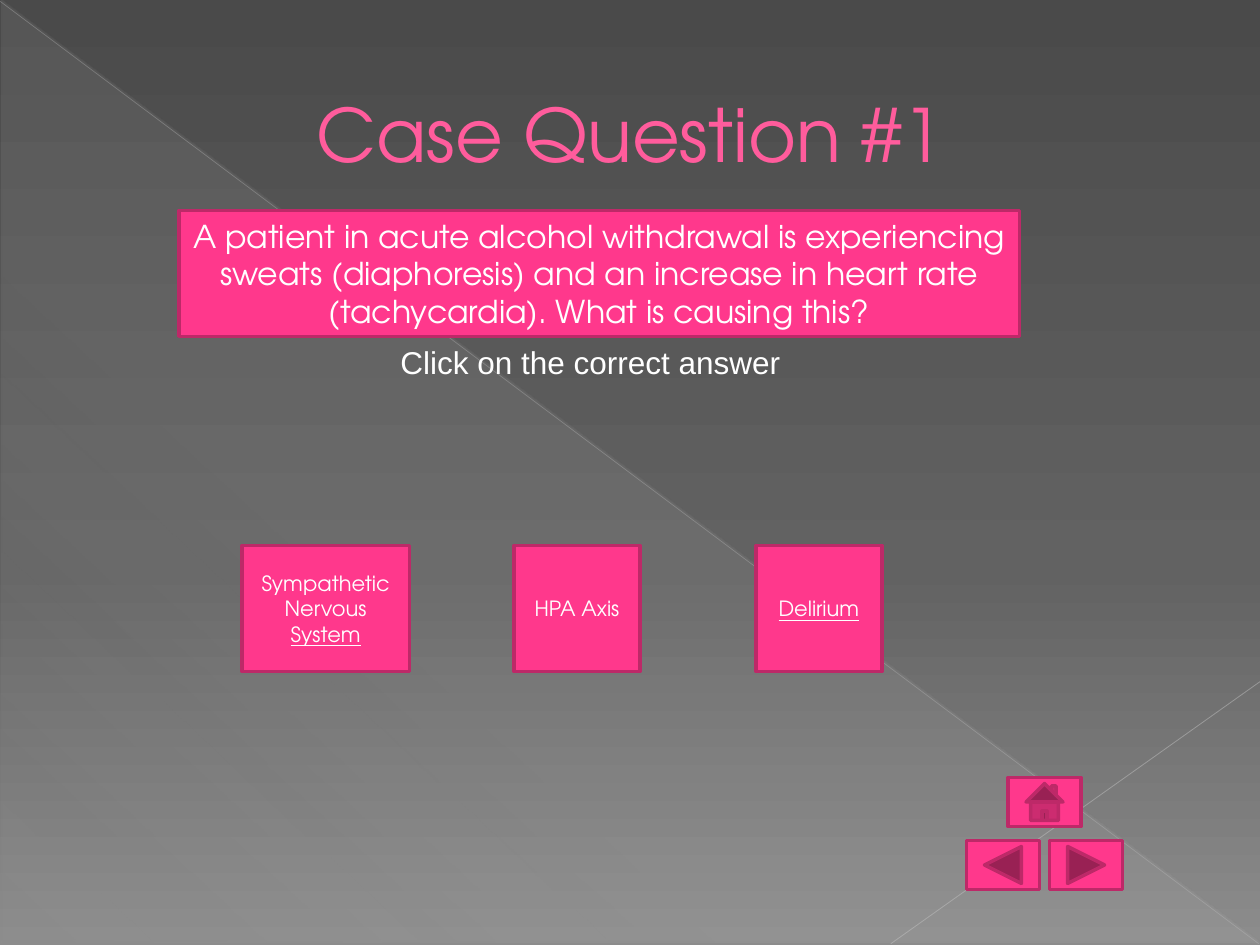
from dataclasses import dataclass

from lxml.etree import SubElement
from pptx import Presentation
from pptx.dml.color import RGBColor
from pptx.enum.shapes import MSO_CONNECTOR, MSO_SHAPE
from pptx.enum.text import MSO_ANCHOR, MSO_AUTO_SIZE, PP_ALIGN
from pptx.oxml import parse_xml
from pptx.oxml.ns import nsdecls, qn
from pptx.util import Inches, Pt

COLORS = {
    "pink": "FF388C", "border": "BD2968", "title": "FF5C9C",
    "title_edge": "B12761", "text": "FFFFFF", "sheen": "D2D2D2",
    "diagonal": "BFBFBF", "corner": "C6C6C6",
    "top": "4A4A4A", "middle": "626262", "bottom": "8C8C8C",
}
DISPLAY_FONT = "TeX Gyre Adventor"


@dataclass
class Box:
    left: float
    top: float
    width: float
    height: float
    size: int
    runs: list[tuple[str, bool]]  # wording, underlined


@dataclass
class NavButton:
    kind: MSO_SHAPE
    left: float
    top: float


@dataclass
class Crease:
    start: tuple[float, float]
    end: tuple[float, float]
    color: str
    width: float
    opacity: int


ANSWER_TOP = 4.33
BOXES = [
    Box(1.42, 1.67, 6.67, 1, 18, [(
        "A patient in acute alcohol withdrawal is experiencing sweats "
        "(diaphoresis) and an increase in heart rate (tachycardia). "
        "What is causing this?", False)]),
    Box(1.92, ANSWER_TOP, 1.33, 1, 12,
        [("Sympathetic Nervous ", False), ("System", True)]),
    Box(4.08, ANSWER_TOP, 1, 1, 12, [("HPA Axis", False)]),
    Box(6, ANSWER_TOP, 1, 1, 12, [("Delirium", True)]),
]
NAV_BUTTONS = [
    NavButton(MSO_SHAPE.ACTION_BUTTON_FORWARD_OR_NEXT, 8.33, 6.67),
    NavButton(MSO_SHAPE.ACTION_BUTTON_BACK_OR_PREVIOUS, 7.67, 6.67),
    NavButton(MSO_SHAPE.ACTION_BUTTON_HOME, 8, 6.17),
]
CREASES = [
    Crease((0, 0.01), (9.99, 7.49), "diagonal", 0.39, 35),
    Crease((10, 5.41), (7.07, 7.49), "corner", 0.47, 45),
]


def rgb(name: str) -> RGBColor:
    return RGBColor.from_string(COLORS[name])


def set_gradient(owner, fill, stops: list[tuple[int, str, int]], angle: int) -> None:
    """Stops are position, colour name and opacity, all in percent."""
    fill.gradient()
    stop_xml = "".join(
        f'<a:gs pos="{position * 1000}"><a:srgbClr val="{COLORS[color]}">'
        f'<a:alpha val="{opacity * 1000}"/></a:srgbClr></a:gs>'
        for position, color, opacity in stops)
    gradient = parse_xml(
        f'<a:gradFill {nsdecls("a")} rotWithShape="1"><a:gsLst>{stop_xml}</a:gsLst>'
        f'<a:lin ang="{angle * 60000}" scaled="0"/></a:gradFill>')
    default = owner.find(".//" + qn("a:gradFill"))
    default.getparent().replace(default, gradient)


def format_run(run, size: int, color: str = "text", font: str = DISPLAY_FONT,
               underline: bool | None = None) -> None:
    formats = {"size": Pt(size), "name": font, "underline": underline}
    for attribute, value in formats.items():
        setattr(run.font, attribute, value)
    run.font.color.rgb = rgb(color)


def add_pink_shape(slide, kind: MSO_SHAPE, left: float, top: float,
                   width: float, height: float):
    shape = slide.shapes.add_shape(kind, *map(Inches, (left, top, width, height)))
    shape.shadow.inherit = False
    shape.fill.solid()
    shape.fill.fore_color.rgb = rgb("pink")
    shape.line.color.rgb = rgb("border")
    shape.line.width = Pt(2)
    return shape


def add_box(slide, box: Box) -> None:
    shape = add_pink_shape(slide, MSO_SHAPE.RECTANGLE,
                           box.left, box.top, box.width, box.height)
    frame = shape.text_frame
    frame.word_wrap = True
    frame.vertical_anchor = MSO_ANCHOR.MIDDLE
    paragraph = frame.paragraphs[0]
    paragraph.alignment = PP_ALIGN.CENTER
    for wording, underlined in box.runs:
        run = paragraph.add_run()
        run.text = wording
        format_run(run, box.size, underline=underlined or None)


def add_crease(slide, crease: Crease) -> None:
    line = slide.shapes.add_connector(
        MSO_CONNECTOR.STRAIGHT, *map(Inches, crease.start + crease.end))
    line.line.color.rgb = rgb(crease.color)
    line.line.width = Pt(crease.width)
    properties = line.element.spPr
    color = properties.find(".//" + qn("a:srgbClr"))
    SubElement(color, qn("a:alpha"), val=str(crease.opacity * 1000))
    SubElement(properties, qn("a:effectLst"))


def add_backdrop(slide) -> None:
    set_gradient(slide.element, slide.background.fill,
                 [(0, "top", 100), (60, "middle", 100), (100, "bottom", 100)], 90)
    sheen = slide.shapes.add_shape(
        MSO_SHAPE.RIGHT_TRIANGLE, *map(Inches, (0.01, 0, 9.99, 7.48)))
    sheen.shadow.inherit = False
    sheen.line.fill.background()
    set_gradient(sheen.element, sheen.fill,
                 [(0, "sheen", 10), (70, "sheen", 8), (100, "sheen", 1)], 133)
    for crease in CREASES:
        add_crease(slide, crease)


def set_title(slide) -> None:
    title = slide.shapes.title
    place = {"left": 0.5, "top": 0.29, "width": 9, "height": 1.53}
    for attribute, value in place.items():
        setattr(title, attribute, Inches(value))
    frame = title.text_frame
    frame.text = "Case Question #1"
    frame.vertical_anchor = MSO_ANCHOR.MIDDLE
    paragraph = frame.paragraphs[0]
    paragraph.alignment = PP_ALIGN.CENTER
    indent = Inches(0.53)
    properties = paragraph._p.get_or_add_pPr()
    properties.set("marL", str(indent))
    properties.set("indent", str(-indent))
    run = paragraph.runs[0]
    format_run(run, 42, "title")
    run._r.get_or_add_rPr().insert(0, parse_xml(
        f'<a:ln {nsdecls("a")} w="{Pt(0.5)}"><a:solidFill>'
        f'<a:srgbClr val="{COLORS["title_edge"]}"/></a:solidFill></a:ln>'))
    # Bring the title in front of the backdrop
    slide.shapes._spTree.append(title.element)


def add_hint(slide) -> None:
    hint = slide.shapes.add_textbox(*map(Inches, (3.08, 2.67, 3.25, 0.4)))
    frame = hint.text_frame
    frame.word_wrap = False
    frame.auto_size = MSO_AUTO_SIZE.SHAPE_TO_FIT_TEXT
    run = frame.paragraphs[0].add_run()
    run.text = "Click on the correct answer"
    format_run(run, 18, font="Arial")


def main() -> None:
    deck = Presentation()
    deck.slide_width, deck.slide_height = Inches(10), Inches(7.5)
    slide = deck.slides.add_slide(deck.slide_layouts[5])

    # Backdrop and navigation
    add_backdrop(slide)
    for button in NAV_BUTTONS:
        add_pink_shape(slide, button.kind, button.left, button.top, 0.58, 0.39)

    # Question, hint and answers
    set_title(slide)
    question, *answers = BOXES
    add_box(slide, question)
    add_hint(slide)
    for answer in answers:
        add_box(slide, answer)

    deck.save("out.pptx")


if __name__ == "__main__":
    main()
